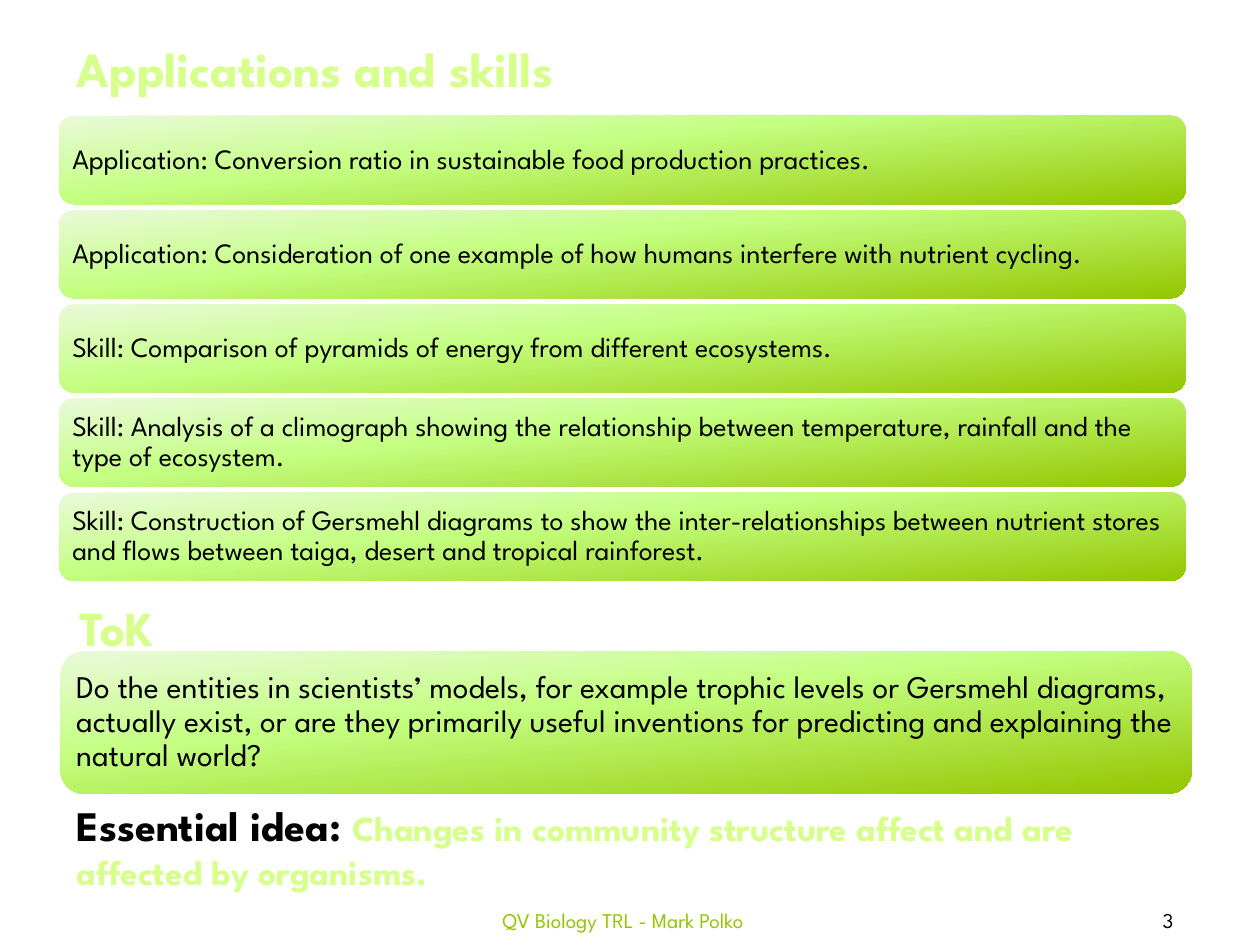
from dataclasses import dataclass

from lxml import etree
from pptx import Presentation
from pptx.dml.color import RGBColor
from pptx.enum.shapes import MSO_SHAPE
from pptx.enum.text import MSO_ANCHOR, MSO_AUTO_SIZE, PP_ALIGN
from pptx.oxml.ns import qn
from pptx.util import Inches, Pt

ROUNDED = MSO_SHAPE.ROUNDED_RECTANGLE
MIDDLE = MSO_ANCHOR.MIDDLE
GROW = MSO_AUTO_SIZE.SHAPE_TO_FIT_TEXT
CENTER, LEFT = PP_ALIGN.CENTER, PP_ALIGN.LEFT

FONT = "League Spartan"
BLACK, GREEN, LIME, OUTLINE = "000000", "94C600", "D6FF8C", "434128"
GRADIENT = ((0, "EAF9DA"), (40, "C4FF82"), (100, GREEN))
GRADIENT_ANGLE = 84


@dataclass
class Run:
    text: str
    size: float
    color: str = BLACK
    heading: bool = False


@dataclass
class Box:
    left: float
    top: float
    width: float
    height: float
    runs: list[Run]


def rgb(color: str) -> RGBColor:
    return RGBColor.from_string(color)


def add_solid_fill(parent, color: str) -> None:
    fill = etree.SubElement(parent, qn("a:solidFill"))
    etree.SubElement(fill, qn("a:srgbClr"), val=color)


def write_runs(paragraph, runs: list[Run]) -> None:
    for item in runs:
        run = paragraph.add_run()
        run.text = item.text
        formats = {"name": FONT, "size": Pt(item.size), "bold": item.heading}
        for name, value in formats.items():
            setattr(run.font, name, value)
        run.font.color.rgb = rgb(item.color)
        if item.heading:
            # Thin letter outline, which comes first in the run properties
            line = etree.Element(qn("a:ln"), w=str(Pt(1)))
            add_solid_fill(line, OUTLINE)
            run.font._element.insert(0, line)


def place(box: Box) -> list[int]:
    return [Inches(v) for v in (box.left, box.top, box.width, box.height)]


def add_text(slide, box: Box, formats: dict, alignment=LEFT) -> None:
    frame = slide.shapes.add_textbox(*place(box)).text_frame
    frame.word_wrap = True
    for name, value in formats.items():
        setattr(frame, name, value)
    frame.paragraphs[0].alignment = alignment
    write_runs(frame.paragraphs[0], box.runs)


def fill_gradient(shape) -> None:
    gradient = etree.Element(qn("a:gradFill"), rotWithShape="1")
    stops = etree.SubElement(gradient, qn("a:gsLst"))
    for position, color in GRADIENT:
        stop = etree.SubElement(stops, qn("a:gs"), pos=str(position * 1000))
        etree.SubElement(stop, qn("a:srgbClr"), val=color)
    etree.SubElement(gradient, qn("a:lin"), ang=str(GRADIENT_ANGLE * 60000), scaled="0")
    shape._element.spPr.find(qn("a:prstGeom")).addnext(gradient)


def add_panel(slide, box: Box) -> None:
    shape = slide.shapes.add_shape(ROUNDED, *place(box))
    shape.shadow.inherit = False
    shape.line.fill.background()
    fill_gradient(shape)
    frame = shape.text_frame
    frame.word_wrap = True
    frame.vertical_anchor = MIDDLE
    for side in ("left", "top", "right", "bottom"):
        setattr(frame, f"margin_{side}", Inches(0.07))
    paragraph = frame.paragraphs[0]
    paragraph.alignment = LEFT
    paragraph.line_spacing = 0.9
    write_runs(paragraph, box.runs)


SKILLS = [
    "Application: Conversion ratio in sustainable food production practices.",
    "Application: Consideration of one example of how humans interfere with nutrient cycling.",
    "Skill: Comparison of pyramids of energy from different ecosystems.",
    "Skill: Analysis of a climograph showing the relationship between temperature, "
    "rainfall and the type of ecosystem.",
    "Skill: Construction of Gersmehl diagrams to show the inter-relationships between "
    "nutrient stores and flows between taiga, desert and tropical rainforest.",
]
FIRST_TOP, LAST_TOP = 0.92, 3.91
PITCH = (LAST_TOP - FIRST_TOP) / (len(SKILLS) - 1)

QUESTION = Box(0.48, 5.17, 8.98, 1.13, [Run(
    "Do the entities in scientists’ models, for example trophic levels or Gersmehl "
    "diagrams, actually exist, or are they primarily useful inventions for predicting "
    "and explaining the natural world?", 18)])

HEADINGS = [
    Box(0.51, 0.26, 4.8, 0.57, [Run("Applications and skills", 28, LIME, True)]),
    Box(0.51, 6.3, 9.03, 0.84, [
        Run("Essential idea: ", 24, BLACK, True),
        Run("Changes in community structure affect and are affected by organisms.",
            20, LIME, True)]),
    Box(0.53, 4.69, 4.8, 0.57, [Run("ToK", 28, LIME, True)]),
]
FOOTERS = [
    Box(8.54, 7.1, 1.46, 0.4, [Run("3", 12)]),
    Box(3.03, 7.1, 3.83, 0.4, [Run("QV Biology TRL - Mark Polko", 12, GREEN)]),
]


def main() -> None:
    presentation = Presentation()
    presentation.slide_width, presentation.slide_height = Inches(10), Inches(7.5)
    slide = presentation.slides.add_slide(presentation.slide_layouts[6])

    # Page number and footer
    for footer in FOOTERS:
        add_text(slide, footer, {"vertical_anchor": MIDDLE}, CENTER)

    # Stack of applications and skills
    for index, skill in enumerate(SKILLS):
        top = FIRST_TOP + index * PITCH
        add_panel(slide, Box(0.47, top, 8.94, 0.7, [Run(skill, 16)]))

    # Headings, then the theory of knowledge question
    for heading in HEADINGS:
        add_text(slide, heading, {"auto_size": GROW})
    add_panel(slide, QUESTION)

    presentation.save("out.pptx")


if __name__ == "__main__":
    main()
